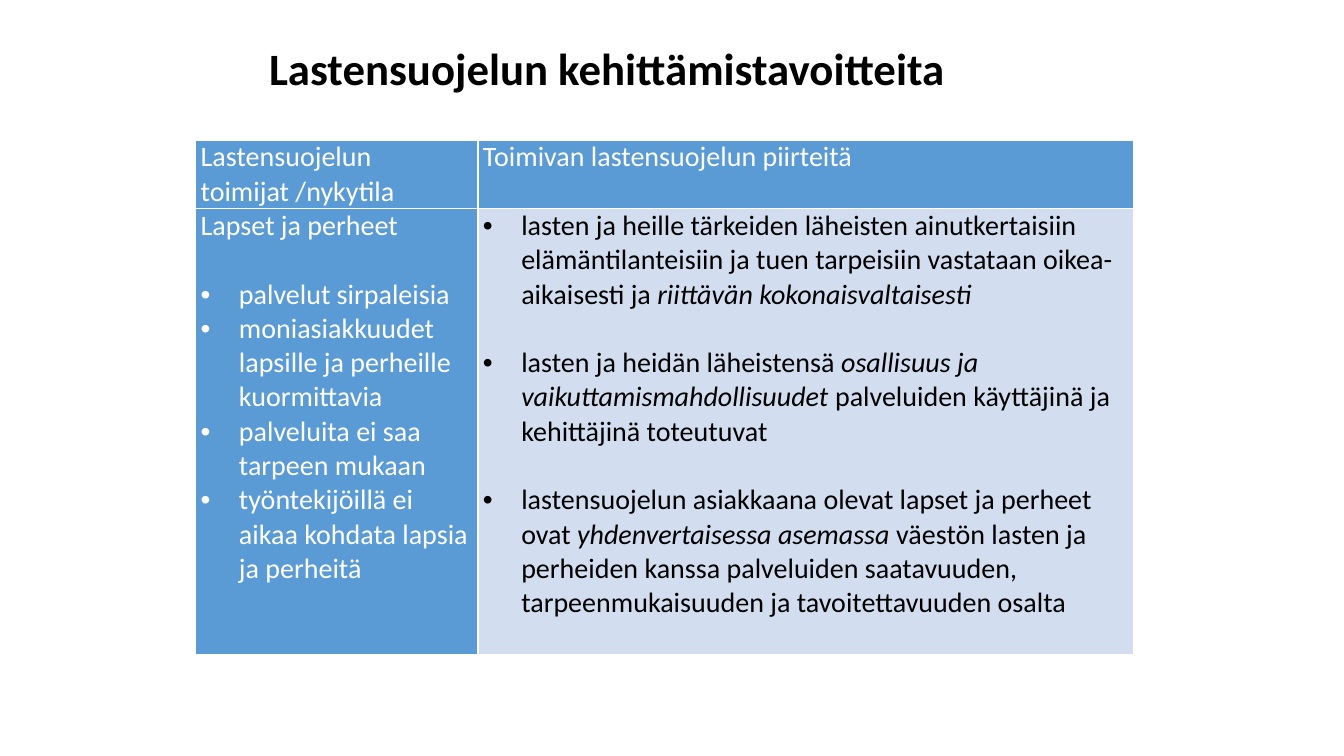
from dataclasses import dataclass

from lxml import etree
from pptx import Presentation, util as u
from pptx.dml.color import RGBColor
from pptx.enum import text
from pptx.oxml import ns

TITLE = "Lastensuojelun kehittämistavoitteita"
HEADERS = ["Lastensuojelun toimijat /nykytila", "Toimivan lastensuojelun piirteitä"]
GROUP = "Lapset ja perheet"
PROBLEMS = [
    "palvelut sirpaleisia",
    "moniasiakkuudet lapsille ja perheille kuormittavia",
    "palveluita ei saa tarpeen mukaan",
    "työntekijöillä ei aikaa kohdata lapsia ja perheitä",
]
# Each goal is a list of runs; every second run is italic.
GOALS = [
    ["lasten ja heille tärkeiden läheisten ainutkertaisiin elämäntilanteisiin "
     "ja tuen tarpeisiin vastataan oikea-aikaisesti ja ",
     "riittävän kokonaisvaltaisesti"],
    ["lasten ja heidän läheistensä ",
     "osallisuus ja vaikuttamismahdollisuudet",
     " palveluiden käyttäjinä ja kehittäjinä toteutuvat"],
    ["lastensuojelun asiakkaana olevat lapset ja perheet ovat ",
     "yhdenvertaisessa asemassa ",
     "väestön lasten ja perheiden kanssa palveluiden saatavuuden, "
     "tarpeenmukaisuuden ja tavoitettavuuden osalta"],
]


@dataclass(frozen=True)
class Theme:
    font: str = "Calibri"
    title_size: int = 32
    body_size: int = 20
    blank_line: float = 24.5
    blue: str = "5B9BD5"
    pale: str = "D2DEEF"
    white: str = "FFFFFF"
    black: str = "000000"


THEME = Theme()
SLIDE = (13.33, 7.5)
TABLE_AT = (1.94, 1.39)
COLUMNS = [2.8, 6.5]
ROWS = [0.68, 4.42]
INDENT = 0.38


def add_runs(p, runs, size, color, bold=None):
    for i, words in enumerate(runs):
        r = p.add_run()
        r.text = words
        r.font.name = THEME.font
        r.font.size = u.Pt(size)
        r.font.bold = bold
        r.font.italic = i % 2 == 1
        r.font.color.rgb = RGBColor.from_string(color)


def add_bullet(p):
    pPr = p._p.get_or_add_pPr()
    pPr.set("marL", str(u.Inches(INDENT)))
    pPr.set("indent", str(-u.Inches(INDENT)))
    font = etree.SubElement(pPr, ns.qn("a:buFont"))
    font.set("typeface", "Arial")
    etree.SubElement(pPr, ns.qn("a:buChar")).set("char", "•")


def style_cell(cell, fill):
    cell.margin_left = cell.margin_right = u.Inches(0.05)
    cell.margin_top = cell.margin_bottom = 0
    tcPr = cell._tc.get_or_add_tcPr()
    for side in "LRTB":
        line = etree.SubElement(tcPr, ns.qn(f"a:ln{side}"), w=str(u.Pt(1)))
        solid = etree.SubElement(line, ns.qn("a:solidFill"))
        etree.SubElement(solid, ns.qn("a:srgbClr"), val=THEME.white)
    cell.fill.solid()
    cell.fill.fore_color.rgb = RGBColor.from_string(fill)


def fill_cell(cell, paragraphs, fill, color):
    """Write paragraphs given as (runs, has bullet, blank lines before)."""
    style_cell(cell, fill)
    tf = cell.text_frame
    for i, (runs, bullet, gap) in enumerate(paragraphs):
        p = tf.add_paragraph() if i else tf.paragraphs[0]
        p.space_before = u.Pt(gap * THEME.blank_line)
        if bullet:
            add_bullet(p)
        add_runs(p, runs, THEME.body_size, color)


def add_title(s):
    box = s.shapes.add_textbox(*map(u.Inches, (2.57, 0.36, 7.42, 0.94)))
    tf = box.text_frame
    tf.word_wrap = True
    tf.vertical_anchor = text.MSO_ANCHOR.TOP
    add_runs(tf.paragraphs[0], [TITLE], THEME.title_size, THEME.black, bold=True)


def add_goal_table(s):
    size = (sum(COLUMNS), sum(ROWS))
    table = s.shapes.add_table(len(ROWS), len(COLUMNS),
                               *map(u.Inches, TABLE_AT + size)).table
    for column, width in zip(table.columns, COLUMNS):
        column.width = u.Inches(width)
    for row, height in zip(table.rows, ROWS):
        row.height = u.Inches(height)

    for i, header in enumerate(HEADERS):
        fill_cell(table.cell(0, i), [([header], False, 0)], THEME.blue, THEME.white)
    problems = [([GROUP], False, 0)]
    problems += [([words], True, int(i == 0)) for i, words in enumerate(PROBLEMS)]
    goals = [(runs, True, int(i > 0)) for i, runs in enumerate(GOALS)]
    fill_cell(table.cell(1, 0), problems, THEME.blue, THEME.white)
    fill_cell(table.cell(1, 1), goals, THEME.pale, THEME.black)


def main():
    prs = Presentation()
    prs.slide_width, prs.slide_height = map(u.Inches, SLIDE)
    s = prs.slides.add_slide(prs.slide_layouts[6])
    add_goal_table(s)
    add_title(s)
    prs.save("out.pptx")


if __name__ == "__main__":
    main()
